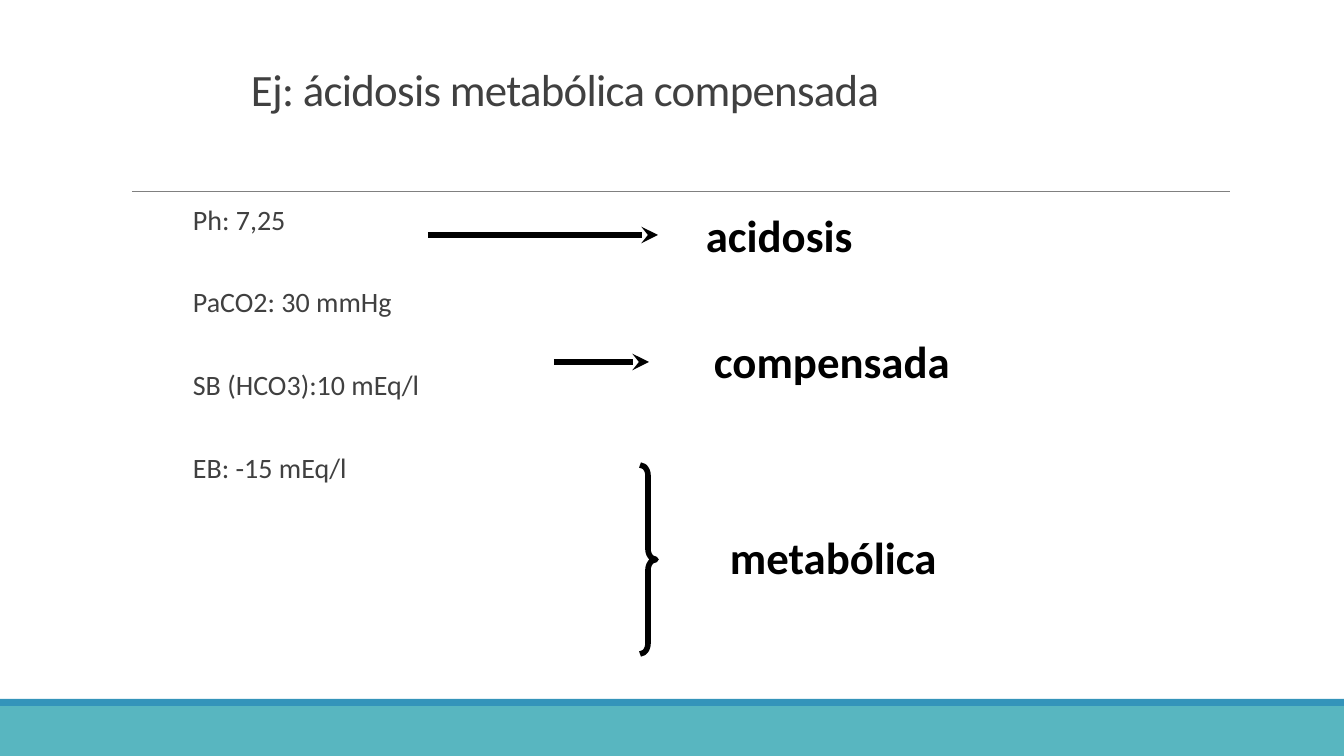
"""Build the slide on compensated metabolic acidosis."""
import pptx
import pptx.util
import pptx.dml.color
import pptx.enum.shapes
import pptx.enum.text
import lxml.etree
import pptx.oxml.ns

PX = 914400 / 100.8
BLACK = "000000"
GREY = "404040"


def lengths(*values):
    return [pptx.util.Emu(round(value * PX)) for value in values]


def color(code):
    return pptx.dml.color.RGBColor.from_string(code)


deck = pptx.Presentation()
deck.slide_width, deck.slide_height = lengths(1344, 756)
page = deck.slides.add_slide(deck.slide_layouts[6])

for top, height, fill in [(706, 50, "58B6C0"), (699, 7, "3494BA")]:
    band = page.shapes.add_shape(
        pptx.enum.shapes.MSO_SHAPE.RECTANGLE, *lengths(0, top, 1344, height))
    band.shadow.inherit = False
    band.fill.solid()
    band.fill.fore_color.rgb = color(fill)
    band.line.fill.background()

values = ["Ph: 7,25", "PaCO2: 30 mmHg", "SB (HCO3):10 mEq/l", "EB: -15 mEq/l"]
texts = [
    (241, 30, 907, 126, ["Ej: ácidosis metabólica compensada"], 32, GREY, False, 0.85),
    (183, 201, 437, 460, values, 20, GREY, False, 0.9),
    (696, 203, 262, 64, ["acidosis"], 32, BLACK, True, 1.0),
    (704, 329, 262, 64, ["compensada"], 32, BLACK, True, 1.0),
    (720, 525, 262, 64, ["metabólica"], 32, BLACK, True, 1.0),
]
for left, top, width, height, lines, size, ink, bold, leading in texts:
    box = page.shapes.add_textbox(*lengths(left, top, width, height))
    frame = box.text_frame
    frame.word_wrap = True
    is_title = leading == 0.85
    if is_title:
        frame.vertical_anchor = pptx.enum.text.MSO_ANCHOR.MIDDLE
    for index, line in enumerate(lines):
        para = frame.add_paragraph() if index else frame.paragraphs[0]
        para.line_spacing = leading
        if index:
            para.space_before = pptx.util.Pt(37.5)
        span = para.add_run()
        span.text = line
        span.font.name = "Calibri"
        span.font.size = pptx.util.Pt(size)
        span.font.bold = bold
        span.font.color.rgb = color(ink)
        if is_title:
            span.font._element.set("spc", "-50")

rules = [
    (132, 1230, 191, "808080", 0.5, False),
    (428, 658, 235, BLACK, 4, True),
    (554, 649, 362, BLACK, 4, True),
]
for start, end, y, ink, weight, has_arrow in rules:
    rule = page.shapes.add_connector(
        pptx.enum.shapes.MSO_CONNECTOR.STRAIGHT, *lengths(start, y, end, y))
    rule.line.color.rgb = color(ink)
    rule.line.width = pptx.util.Pt(weight)
    if has_arrow:
        lxml.etree.SubElement(
            rule.line._get_or_add_ln(), pptx.oxml.ns.qn("a:tailEnd"), type="stealth")
    lxml.etree.SubElement(rule._element.spPr, pptx.oxml.ns.qn("a:effectLst"))

brace = page.shapes.add_shape(
    pptx.enum.shapes.MSO_SHAPE.RIGHT_BRACE, *lengths(640, 465, 16, 189))
brace.shadow.inherit = False
brace.adjustments[0] = 0.66
brace.adjustments[1] = 0.5
brace.fill.background()
brace.line.color.rgb = color(BLACK)
brace.line.width = pptx.util.Pt(4)

deck.save("out.pptx")
